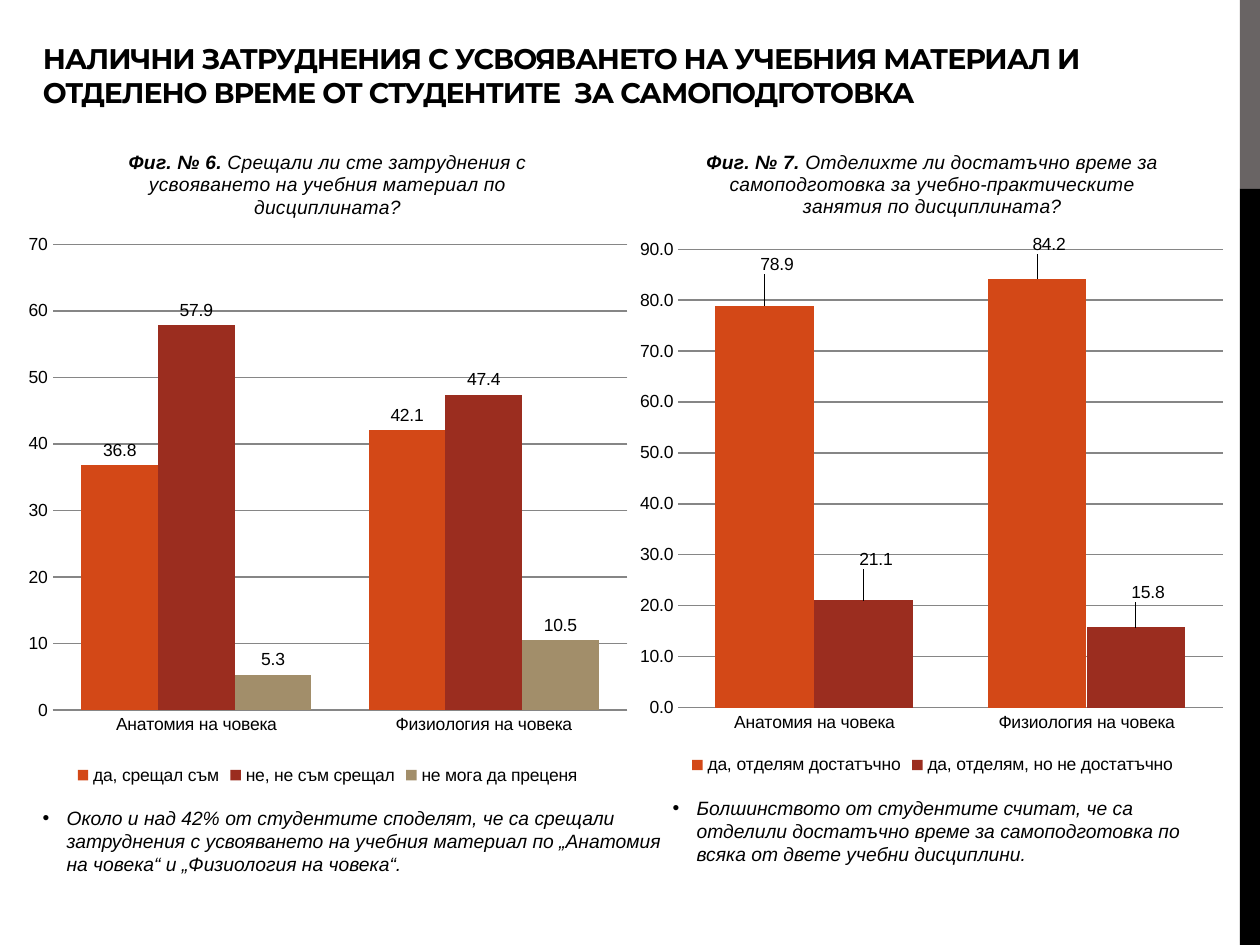
from lxml import etree
from pptx import Presentation
from pptx.chart.data import CategoryChartData
from pptx.dml.color import RGBColor
from pptx.enum.chart import XL_CHART_TYPE, XL_LABEL_POSITION, XL_LEGEND_POSITION, XL_TICK_MARK
from pptx.enum.shapes import MSO_SHAPE
from pptx.enum.text import MSO_ANCHOR, MSO_AUTO_SIZE, PP_ALIGN
from pptx.oxml.ns import qn
from pptx.util import Inches, Pt

COLORS = {"text": "000000", "grey": "696464", "black": "000000", "grid": "868686",
          "orange": "D34817", "red": "9B2D1F", "tan": "A28E6A"}
SUBJECTS = ["Анатомия на човека", "Физиология на човека"]


def rgb(name):
    return RGBColor.from_string(COLORS[name])


def style(font, size, name="Arial", bold=False, italic=False):
    font.size, font.name = Pt(size), name
    font.bold, font.italic = bold, italic
    font.color.rgb = rgb("text")


def add_sidebar(slide, x, y, w, h):
    split = Inches(1.5)
    for top, height, color in [(y, split, "grey"), (y + split, h - split, "black")]:
        sp = slide.shapes.add_shape(MSO_SHAPE.RECTANGLE, x, top, w, height)
        sp.shadow.inherit = False
        sp.fill.solid()
        sp.fill.fore_color.rgb = rgb(color)
        sp.line.fill.background()


def add_title(slide, x, y, w, h, text):
    sp = slide.shapes.title
    sp.left, sp.top, sp.width, sp.height = x, y, w, h
    tf = sp.text_frame
    tf.word_wrap, tf.auto_size = True, MSO_AUTO_SIZE.NONE
    tf.vertical_anchor = MSO_ANCHOR.BOTTOM
    p = tf.paragraphs[0]
    p.alignment = PP_ALIGN.LEFT
    r = p.add_run()
    r.text = text
    style(r.font, 16.2, "Montserrat", bold=True)
    r.font._element.set("spc", "-60")


def add_bullet(slide, x, y, w, h, text):
    tf = slide.shapes.add_textbox(x, y, w, h).text_frame
    tf.word_wrap = True
    p = tf.paragraphs[0]
    pPr = p._p.get_or_add_pPr()
    pPr.set("marL", str(Inches(0.19)))
    pPr.set("indent", str(-Inches(0.19)))
    etree.SubElement(pPr, qn("a:buFont"), typeface="Arial")
    etree.SubElement(pPr, qn("a:buChar"), char="•")
    p.space_after = Pt(10)
    r = p.add_run()
    r.text = text
    style(r.font, 11, italic=True)


def make_layout(inner=False, **values):
    layout = etree.Element(qn("c:layout"))
    manual = etree.SubElement(layout, qn("c:manualLayout"))
    if inner:
        etree.SubElement(manual, qn("c:layoutTarget"), val="inner")
        for mode in ("xMode", "yMode"):
            etree.SubElement(manual, qn(f"c:{mode}"), val="edge")
    for key, value in values.items():
        etree.SubElement(manual, qn(f"c:{key}"), val=str(value))
    return layout


def add_chart(slide, x, y, w, h, figure, question, series, plot_box, axis_format,
              label_shifts=()):
    data = CategoryChartData()
    data.categories = SUBJECTS
    for name, values, _ in series:
        data.add_series(name, values)
    chart = slide.shapes.add_chart(XL_CHART_TYPE.COLUMN_CLUSTERED, x, y, w, h, data).chart
    style(chart.font, 10)

    # Title, legend and plot area
    p = chart.chart_title.text_frame.paragraphs[0]
    for text, bold in [(figure, True), (question, False)]:
        r = p.add_run()
        r.text = text
        style(r.font, 11, bold=bold, italic=True)
    chart.chart_title.include_in_layout = False
    chart.has_legend = True
    chart.legend.position = XL_LEGEND_POSITION.BOTTOM
    chart.legend.include_in_layout = False
    area = chart._chartSpace.chart.plotArea
    for old in area.findall(qn("c:layout")):
        area.remove(old)
    area.insert(0, make_layout(inner=True, **plot_box))

    # Axes
    for axis in (chart.category_axis, chart.value_axis):
        axis.major_tick_mark = axis.minor_tick_mark = XL_TICK_MARK.NONE
    axis = chart.value_axis
    axis.minimum_scale = 0
    axis.format.line.fill.background()
    axis.tick_labels.number_format = axis_format
    axis.tick_labels.number_format_is_linked = False
    for line in (axis.major_gridlines.format.line, chart.category_axis.format.line):
        line.color.rgb = rgb("grid")
        line.width = Pt(0.75)

    # Columns and their labels
    plot = chart.plots[0]
    plot.gap_width, plot.overlap, plot.vary_by_categories = 75, 0, False
    for ser, (_, _, color) in zip(plot.series, series):
        ser.format.fill.solid()
        ser.format.fill.fore_color.rgb = rgb(color)
        labels = ser.data_labels
        labels.show_value = True
        labels.number_format, labels.number_format_is_linked = "0.0", False
        labels.position = XL_LABEL_POSITION.OUTSIDE_END
    for ser, shifts in zip(plot.series, label_shifts):
        for i, (dx, dy) in enumerate(shifts):
            ser.points[i].data_label.position = XL_LABEL_POSITION.OUTSIDE_END
            dLbl = ser.data_labels._element.findall(qn("c:dLbl"))[i]
            dLbl.insert(1, make_layout(x=dx, y=dy))


def main():
    prs = Presentation()
    prs.slide_width, prs.slide_height = Inches(10), Inches(7.5)
    slide = prs.slides.add_slide(prs.slide_layouts[5])

    add_sidebar(slide, Inches(9.84), 0, Inches(0.16), prs.slide_height)
    add_title(slide, Inches(0.24), Inches(0.21), Inches(9.45), Inches(0.71),
              "НАЛИЧНИ ЗАТРУДНЕНИЯ С УСВОЯВАНЕТО НА УЧЕБНИЯ МАТЕРИАЛ И "
              "ОТДЕЛЕНО ВРЕМЕ ОТ СТУДЕНТИТЕ  ЗА САМОПОДГОТОВКА")

    # Findings below the charts
    add_bullet(slide, Inches(0.24), Inches(6.35), Inches(5.23), Inches(0.79),
               "Около и над 42% от студентите споделят, че са срещали затруднения с "
               "усвояването на учебния материал по „Анатомия на човека“ и "
               "„Физиология на човека“.")
    add_bullet(slide, Inches(5.24), Inches(6.27), Inches(4.57), Inches(0.87),
               "Болшинството от студентите считат, че са отделили достатъчно време за "
               "самоподготовка по всяка от двете учебни дисциплини.")

    # Difficulties with the material
    add_chart(slide, Inches(0.12), Inches(0.99), Inches(4.96), Inches(5.28),
              "Фиг. № 6. ",
              "Срещали ли сте затруднения с усвояването на учебния материал по дисциплината?",
              [("да, срещал съм", (36.8, 42.1), "orange"),
               ("не, не съм срещал", (57.9, 47.4), "red"),
               ("не мога да преценя", (5.3, 10.5), "tan")],
              dict(x=0.06, y=0.18, w=0.92, h=0.7), "General")

    # Time spent on self-study
    add_chart(slide, Inches(5), Inches(0.99), Inches(4.8), Inches(5.2),
              "Фиг. № 7. ",
              "Отделихте ли достатъчно време за самоподготовка за "
              "учебно-практическите занятия по дисциплината?",
              [("да, отделям достатъчно", (78.9, 84.2), "orange"),
               ("да, отделям, но не достатъчно", (21.1, 15.8), "red")],
              dict(x=0.08, y=0.19, w=0.9, h=0.7), "0.0",
              [[(0.02, -0.04), (0.02, -0.03)], [(0.02, -0.04), (0.02, -0.03)]])

    prs.save("out.pptx")


if __name__ == "__main__":
    main()
